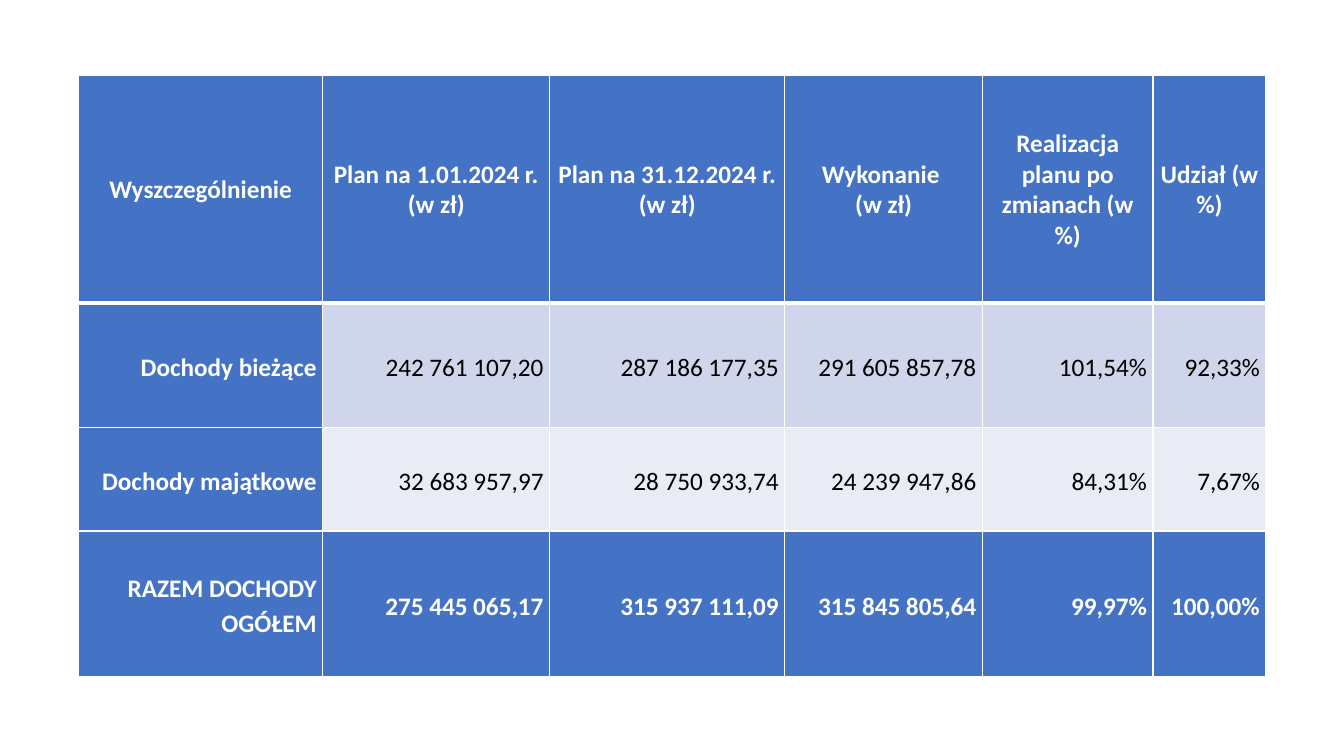
"""Build a slide with a table of planned and collected budget income."""
import dataclasses

import lxml.etree
import pptx
import pptx.dml.color
import pptx.enum.text
import pptx.oxml.ns
import pptx.util


@dataclasses.dataclass(frozen=True)
class Theme:
    """Colours, type and line sizes of the slide."""
    font: str = "Calibri"
    size: int = 18
    space_after: int = 8
    line_spacing: float = 1.15
    accent: str = "4472C4"
    bands: tuple = ("CFD5EA", "E9EBF5")
    light: str = "FFFFFF"
    dark: str = "000000"
    thin: int = 1
    thick: int = 3


THEME = Theme()
SLIDE_WIDTH = pptx.util.Inches(13.33)
SLIDE_HEIGHT = pptx.util.Inches(7.5)
TABLE_LEFT, TABLE_TOP, TABLE_WIDTH, TABLE_HEIGHT = 0.0585, 0.1, 0.8835, 0.7945
COLUMN_WEIGHTS = (2.42, 2.25, 2.33, 1.96, 1.69, 1.12)
ROW_WEIGHTS = (2.26, 1.23, 1.03, 1.44)
INCOME = (
    ("Wyszczególnienie", "Plan na 1.01.2024 r. (w zł)", "Plan na 31.12.2024 r. (w zł)",
     "Wykonanie \n(w zł)", "Realizacja planu po zmianach (w %)", "Udział (w %)"),
    ("Dochody bieżące", "242 761 107,20", "287 186 177,35", "291 605 857,78", "101,54%", "92,33%"),
    ("Dochody majątkowe", "32 683 957,97", "28 750 933,74", "24 239 947,86", "84,31%", "7,67%"),
    ("RAZEM DOCHODY OGÓŁEM", "275 445 065,17", "315 937 111,09", "315 845 805,64", "99,97%", "100,00%"),
)


def share_out(tracks, weights, total, dimension):
    """Divide a total length among table columns or rows by weight."""
    for track, weight in zip(tracks, weights):
        setattr(track, dimension, round(total * weight / sum(weights)))


def add_borders(cell, widths):
    """Draw solid cell borders, given their widths by side."""
    properties = cell._tc.get_or_add_tcPr()
    for position, (side, width) in enumerate(widths.items()):
        line = lxml.etree.Element(pptx.oxml.ns.qn(f"a:ln{side}"), w=str(pptx.util.Pt(width)))
        fill = lxml.etree.SubElement(line, pptx.oxml.ns.qn("a:solidFill"))
        lxml.etree.SubElement(fill, pptx.oxml.ns.qn("a:srgbClr"), val=THEME.light)
        properties.insert(position, line)


def write_text(cell, text, color, bold, header):
    """Write the text of a cell, breaking lines at newlines."""
    paragraph = cell.text_frame.paragraphs[0]
    alignments = pptx.enum.text.PP_ALIGN
    paragraph.alignment = alignments.CENTER if header else alignments.RIGHT
    paragraph.space_after = pptx.util.Pt(THEME.space_after)
    if not header:
        paragraph.line_spacing = THEME.line_spacing
    for index, line in enumerate(text.split("\n")):
        if index:
            paragraph.add_line_break()
        run = paragraph.add_run()
        run.text = line
        run.font.name = THEME.font
        run.font.size = pptx.util.Pt(THEME.size)
        run.font.bold = bold
        run.font.color.rgb = pptx.dml.color.RGBColor.from_string(color)


def fill_cell(cell, text, row, column):
    """Style and write one cell by its place in the table."""
    header = row == 0
    emphasized = header or column == 0 or row == len(INCOME) - 1
    background = THEME.accent if emphasized else THEME.bands[row - 1]
    cell.fill.solid()
    cell.fill.fore_color.rgb = pptx.dml.color.RGBColor.from_string(background)
    cell.vertical_anchor = pptx.enum.text.MSO_ANCHOR.MIDDLE
    cell.margin_left = cell.margin_right = pptx.util.Inches(0.06)
    cell.margin_top = pptx.util.Inches(0.01)
    cell.margin_bottom = 0
    write_text(cell, text, THEME.light if emphasized else THEME.dark, emphasized, header)
    add_borders(cell, {
        "L": THEME.thin,
        "R": THEME.thin,
        "T": THEME.thick if row == 1 else THEME.thin,
        "B": THEME.thick if header else THEME.thin,
    })


def add_income_table(slide):
    """Add the income table to the slide."""
    width = round(SLIDE_WIDTH * TABLE_WIDTH)
    height = round(SLIDE_HEIGHT * TABLE_HEIGHT)
    table = slide.shapes.add_table(
        len(ROW_WEIGHTS), len(COLUMN_WEIGHTS),
        round(SLIDE_WIDTH * TABLE_LEFT), round(SLIDE_HEIGHT * TABLE_TOP), width, height,
    ).table
    share_out(table.columns, COLUMN_WEIGHTS, width, "width")
    share_out(table.rows, ROW_WEIGHTS, height, "height")
    for row, texts in enumerate(INCOME):
        for column, text in enumerate(texts):
            fill_cell(table.cell(row, column), text, row, column)


def main():
    """Create and save the presentation."""
    presentation = pptx.Presentation()
    presentation.slide_width = SLIDE_WIDTH
    presentation.slide_height = SLIDE_HEIGHT
    slide = presentation.slides.add_slide(presentation.slide_layouts[6])
    add_income_table(slide)
    presentation.save("out.pptx")


if __name__ == "__main__":
    main()
